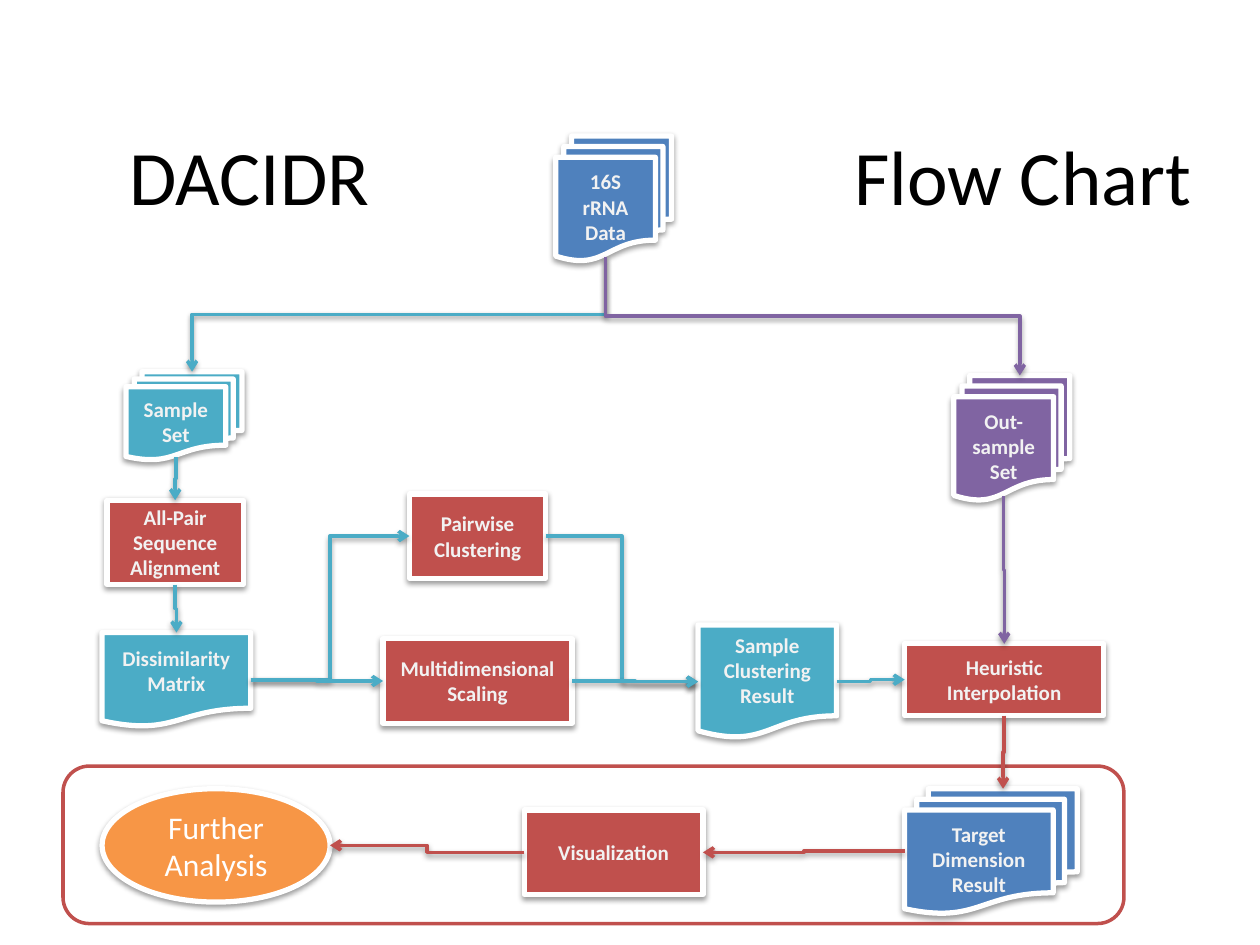
"""Build the DACIDR flow chart slide."""
import dataclasses

import pptx
import pptx.dml.color
import pptx.enum.shapes
import pptx.enum.text
import pptx.oxml
import pptx.oxml.ns
import pptx.util
from lxml import etree

Inches, Pt = pptx.util.Inches, pptx.util.Pt
SHAPE = pptx.enum.shapes.MSO_SHAPE
ALIGN = pptx.enum.text.PP_ALIGN
qn = pptx.oxml.ns.qn
TOP, LEFT, BOTTOM, RIGHT = range(4)


@dataclasses.dataclass(frozen=True)
class Theme:
    font: str = "Calibri"
    black: str = "000000"
    white: str = "FFFFFF"
    label: str = "F2F2F2"
    blue: str = "4F81BD"
    red: str = "C0504D"
    teal: str = "4BACC6"
    purple: str = "8064A2"
    orange: str = "F79646"
    title_size: int = 44
    label_size: int = 12
    result_size: int = 18
    border: int = 3
    flow: int = 2


T = Theme()
PROCESS = SHAPE.FLOWCHART_PROCESS
DOCUMENT = SHAPE.FLOWCHART_DOCUMENT
STACK = SHAPE.FLOWCHART_MULTIDOCUMENT

BOXES = {
    "rna": (STACK, 4.41, 1.08, 0.92, 0.99, T.blue, "16S rRNA Data"),
    "alignment": (PROCESS, 0.85, 3.97, 1.08, 0.67, T.red, "All-Pair Sequence Alignment"),
    "interpolation": (PROCESS, 7.18, 5.11, 1.58, 0.57, T.red, "Heuristic Interpolation"),
    "clustering": (PROCESS, 3.25, 3.92, 1.08, 0.67, T.red, "Pairwise Clustering"),
    "scaling": (PROCESS, 3.04, 5.07, 1.5, 0.67, T.red, "Multidimensional Scaling"),
    "matrix": (DOCUMENT, 0.81, 5.02, 1.18, 0.75, T.teal, "Dissimilarity Matrix"),
    "result": (DOCUMENT, 5.54, 4.96, 1.1, 0.9, T.teal, "Sample Clustering Result"),
    "target": (STACK, 7.18, 6.26, 1.37, 0.99, T.blue, "Target Dimension Result"),
    "visualization": (PROCESS, 4.16, 6.43, 1.42, 0.67, T.red, "Visualization"),
    "out_sample": (STACK, 7.57, 2.98, 0.92, 0.99, T.purple, "Out-sample Set"),
    "sample": (STACK, 1, 2.95, 0.92, 0.7, T.teal, "Sample Set"),
}

FLOWS = [
    ("rna", BOTTOM, "sample", TOP, T.teal),
    ("rna", BOTTOM, "out_sample", TOP, T.purple),
    ("sample", BOTTOM, "alignment", TOP, T.teal),
    ("alignment", BOTTOM, "matrix", TOP, T.teal),
    ("matrix", RIGHT, "clustering", LEFT, T.teal),
    ("matrix", RIGHT, "scaling", LEFT, T.teal),
    ("clustering", RIGHT, "result", LEFT, T.teal),
    ("scaling", RIGHT, "result", LEFT, T.teal),
    ("result", RIGHT, "interpolation", LEFT, T.teal),
    ("out_sample", BOTTOM, "interpolation", TOP, T.purple),
    ("interpolation", BOTTOM, "target", TOP, T.red),
    ("target", LEFT, "visualization", RIGHT, T.red),
    ("visualization", LEFT, "analysis", RIGHT, T.red),
]


def rgb(color):
    """Return the RGBColor of a hex string."""
    return pptx.dml.color.RGBColor.from_string(color)


def write(tf, text, size=T.label_size, color=T.label, bold=False, align=ALIGN.CENTER):
    """Fill a text frame with one formatted paragraph."""
    tf.word_wrap = True
    tf.vertical_anchor = pptx.enum.text.MSO_ANCHOR.MIDDLE
    p = tf.paragraphs[0]
    p.alignment = align
    r = p.add_run()
    r.text = text
    r.font.name, r.font.size, r.font.bold = T.font, Pt(size), bold
    r.font.color.rgb = rgb(color)


def add_shadow(sp):
    """Give a shape or connector the soft shadow below it."""
    sp_pr = sp._element.spPr
    effects = sp_pr.find(qn("a:effectLst"))
    if effects is None:
        effects = etree.SubElement(sp_pr, qn("a:effectLst"))
    shadow = etree.SubElement(effects, qn("a:outerShdw"), blurRad="40000",
                              dist="20000", dir="5400000", rotWithShape="0")
    color = etree.SubElement(shadow, qn("a:srgbClr"), val=T.black)
    etree.SubElement(color, qn("a:alpha"), val="38000")


def add_box(s, kind, x, y, w, h, fill, line=T.white, width=T.border):
    """Add a filled and outlined preset shape."""
    sp = s.shapes.add_shape(kind, Inches(x), Inches(y), Inches(w), Inches(h))
    sp.fill.solid()
    sp.fill.fore_color.rgb = rgb(fill)
    sp.line.color.rgb = rgb(line)
    sp.line.width = Pt(width)
    sp.shadow.inherit = False
    return sp


def add_step(s, kind, x, y, w, h, fill, text, **fmt):
    """Add a labelled step of the flow chart."""
    sp = add_box(s, kind, x, y, w, h, fill)
    add_shadow(sp)
    write(sp.text_frame, text, **fmt)
    return sp


def site(sp, side):
    """Return the point where a flow meets a side of a shape."""
    stack = sp.auto_shape_type == STACK
    fx, fy = {
        TOP: (0.57 if stack else 0.5, 0),
        LEFT: (0, 0.5),
        BOTTOM: (0.43 if stack else 0.5, 0.97 if stack else 1),
        RIGHT: (1, 0.5),
    }[side]
    return sp.left + int(sp.width * fx), sp.top + int(sp.height * fy)


def add_flow(s, start, start_side, end, end_side, color):
    """Add an elbow arrow between the sides of two shapes."""
    (x1, y1), (x2, y2) = site(start, start_side), site(end, end_side)
    vertical = start_side == BOTTOM
    leftward = x2 < x1
    if vertical:
        cx, cy = (x1 + x2) // 2, (y1 + y2) // 2
        half_w = (y2 - y1) // 2 * (1 if leftward else -1)
        half_h = abs(x2 - x1) // 2
        x1, y1, x2, y2 = cx - half_w, cy - half_h, cx + half_w, cy + half_h
    elbow = pptx.enum.shapes.MSO_CONNECTOR.ELBOW
    cn = s.shapes.add_connector(elbow, x1, y1, x2, y2)
    if vertical:
        cn._element.spPr.find(qn("a:xfrm")).set("rot", "5400000" if leftward else "16200000")
    else:
        cn.begin_connect(start, start_side)
        if end.auto_shape_type != SHAPE.OVAL:
            cn.end_connect(end, end_side)
    cn.line.color.rgb = rgb(color)
    cn.line.width = Pt(T.flow)
    etree.SubElement(cn.line._get_or_add_ln(), qn("a:tailEnd"), type="arrow")
    add_shadow(cn)


def add_title(s, left_text, right_text):
    """Add a title in two parts set apart by a tab stop."""
    tf = s.shapes.add_textbox(Inches(0.81), Inches(0.92), Inches(9), Inches(0.93)).text_frame
    tf.margin_left = Inches(0.22)
    p_pr = tf.paragraphs[0]._p.get_or_add_pPr()
    tabs = etree.SubElement(p_pr, qn("a:tabLst"))
    etree.SubElement(tabs, qn("a:tab"), pos=str(Inches(5.75)), algn="l")
    write(tf, f"{left_text}\t{right_text}", size=T.title_size, color=T.black, align=ALIGN.LEFT)


def main():
    """Build and save the slide."""
    prs = pptx.Presentation()
    prs.slide_width, prs.slide_height = Inches(10), Inches(7.5)
    s = prs.slides.add_slide(prs.slide_layouts[6])
    add_box(s, SHAPE.ROUNDED_RECTANGLE, 0.5, 6.08, 8.42, 1.25, T.white, line=T.red, width=T.flow)
    add_title(s, "DACIDR", "Flow Chart")
    steps = {name: add_step(s, *box, bold=True) for name, box in BOXES.items()}
    steps["analysis"] = add_step(s, SHAPE.OVAL, 0.81, 6.26, 1.81, 0.9, T.orange,
                                 "Further Analysis", size=T.result_size, color=T.white)
    for start, start_side, end, end_side, color in FLOWS:
        add_flow(s, steps[start], start_side, steps[end], end_side, color)
    prs.save("out.pptx")


if __name__ == "__main__":
    main()
